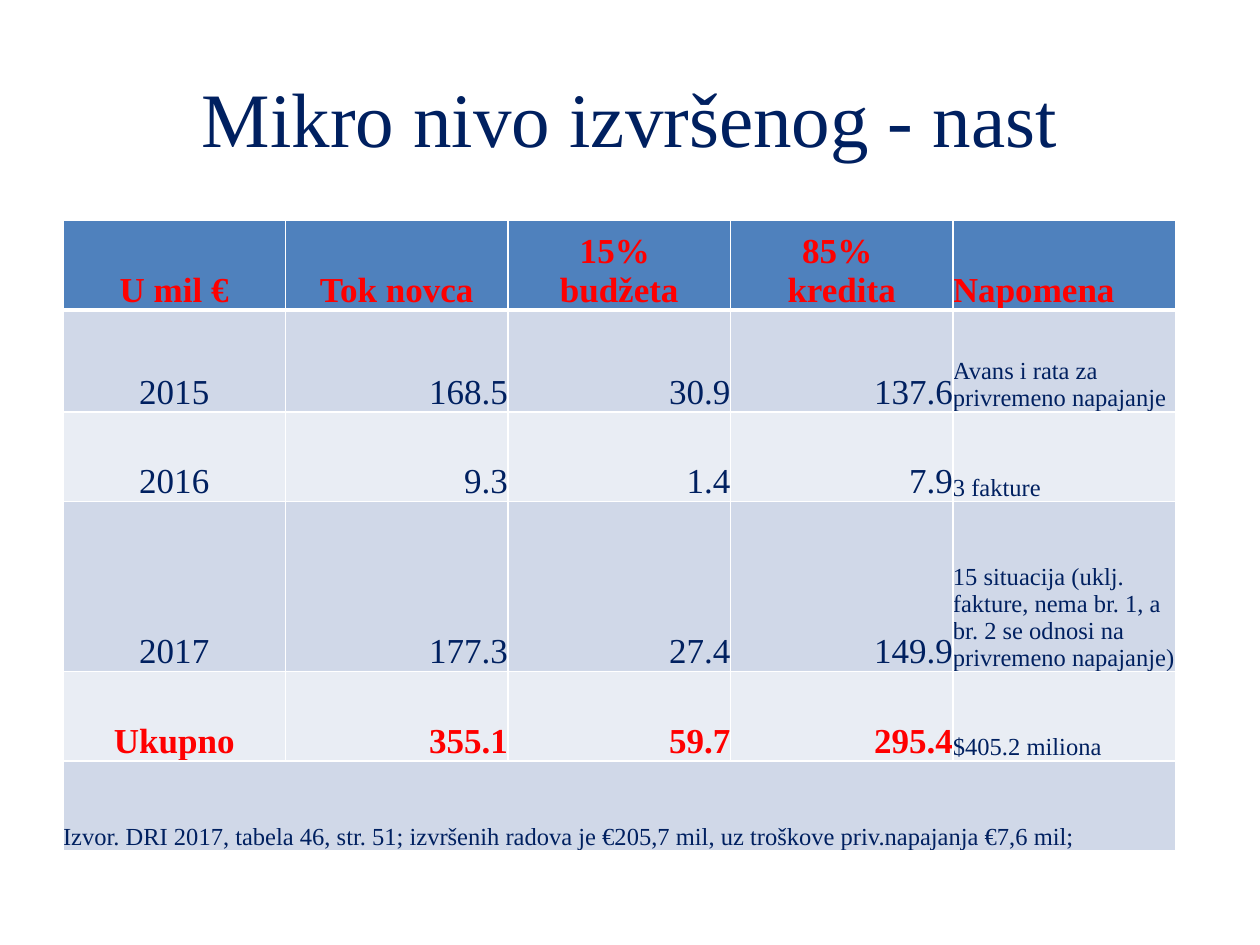
from dataclasses import dataclass

from lxml import etree
from pptx import Presentation
from pptx.dml.color import RGBColor
from pptx.enum.text import MSO_ANCHOR, PP_ALIGN
from pptx.oxml.ns import qn
from pptx.util import Inches, Pt

LEFT, MID, RIGHT = PP_ALIGN.LEFT, PP_ALIGN.CENTER, PP_ALIGN.RIGHT
LOW, CORE = MSO_ANCHOR.BOTTOM, MSO_ANCHOR.MIDDLE
WIDE, HIGH = Inches(10), Inches(7.5)


@dataclass(frozen=True)
class Theme:
    font: str = "Times New Roman"
    navy: str = "002060"
    red: str = "FF0000"
    white: str = "FFFFFF"
    head: str = "4F81BD"
    bands: tuple[str, str] = ("D0D8E8", "E9EDF4")
    title: int = 44
    body: int = 20
    note: int = 14
    thin: int = 1
    thick: int = 3


@dataclass(frozen=True)
class Row:
    high: float
    cells: tuple[str, ...]
    bold: bool = False


THEME = Theme()
COLS = 5
ROWS = (
    Row(0.71, ("U mil €", "Tok novca", "15% \nbudžeta", "85% \nkredita", "Napomena"), True),
    Row(0.81, ("2015", "168.5", "30.9", "137.6", "Avans i rata za privremeno napajanje")),
    Row(0.71, ("2016", "9.3", "1.4", "7.9", "3 fakture")),
    Row(1.35, ("2017", "177.3", "27.4", "149.9",
               "15 situacija (uklj. fakture, nema br. 1, a br. 2 se odnosi na privremeno napajanje)")),
    Row(0.71, ("Ukupno", "355.1", "59.7", "295.4", "$405.2 miliona"), True),
    Row(0.71, ("Izvor. DRI 2017, tabela 46, str. 51; izvršenih radova je €205,7 mil, "
               "uz troškove priv.napajanja €7,6 mil;",)),
)


def put(item, form: dict) -> None:
    for name, value in form.items():
        setattr(item, name, value)


def write(frame, text: str, size: int, tint: str, align, bold: bool = False) -> None:
    frame.text = text
    form = {"name": THEME.font, "size": Pt(size), "bold": bold}
    for para in frame.paragraphs:
        para.alignment = align
        for run in para.runs:
            put(run.font, form)
            run.font.color.rgb = RGBColor.from_string(tint)


def edge(cell, tag: str, width: int) -> None:
    line = etree.SubElement(cell._tc.get_or_add_tcPr(), qn(tag), w=str(Pt(width)))
    fill = etree.SubElement(line, qn("a:solidFill"))
    etree.SubElement(fill, qn("a:srgbClr"), val=THEME.white)


def style(cell, row: int) -> None:
    put(cell, {"vertical_anchor": LOW, "margin_left": 0, "margin_right": 0,
               "margin_top": 0, "margin_bottom": 0})
    top = THEME.thick if row == 1 else THEME.thin
    base = THEME.thick if row == 0 else THEME.thin
    for tag, width in (("a:lnL", THEME.thin), ("a:lnR", THEME.thin),
                       ("a:lnT", top), ("a:lnB", base)):
        edge(cell, tag, width)
    cell.fill.solid()
    tint = THEME.bands[(row - 1) % 2] if row else THEME.head
    cell.fill.fore_color.rgb = RGBColor.from_string(tint)


def fill_row(table, row: int, data: Row) -> None:
    table.rows[row].height = Inches(data.high)
    for col in range(COLS):
        style(table.cell(row, col), row)
    if len(data.cells) == 1:
        table.cell(row, 0).merge(table.cell(row, COLS - 1))
    for col, text in enumerate(data.cells):
        note = row > 0 and (col == COLS - 1 or len(data.cells) == 1)
        bold = data.bold and not note
        if note or col == COLS - 1:
            align = LEFT
        else:
            align = MID if row == 0 or col == 0 else RIGHT
        write(table.cell(row, col).text_frame, text,
              THEME.note if note else THEME.body,
              THEME.red if bold else THEME.navy, align, bold)


def add_title(slide, text: str) -> None:
    box = slide.shapes.add_textbox(int(WIDE * 0.05), int(HIGH * 0.04),
                                   int(WIDE * 0.9), Inches(1.25))
    put(box.text_frame, {"word_wrap": True, "vertical_anchor": CORE})
    write(box.text_frame, text, THEME.title, THEME.navy, MID)


def add_grid(slide, rows: tuple[Row, ...]) -> None:
    high = Inches(sum(row.high for row in rows))
    table = slide.shapes.add_table(len(rows), COLS, int(WIDE * 0.05), Inches(1.75),
                                   Inches(8.83), high).table
    for row, data in enumerate(rows):
        fill_row(table, row, data)


def main() -> None:
    deck = Presentation()
    put(deck, {"slide_width": WIDE, "slide_height": HIGH})
    slide = deck.slides.add_slide(deck.slide_layouts[6])
    add_title(slide, "Mikro nivo izvršenog - nast")
    add_grid(slide, ROWS)
    deck.save("out.pptx")


if __name__ == "__main__":
    main()
